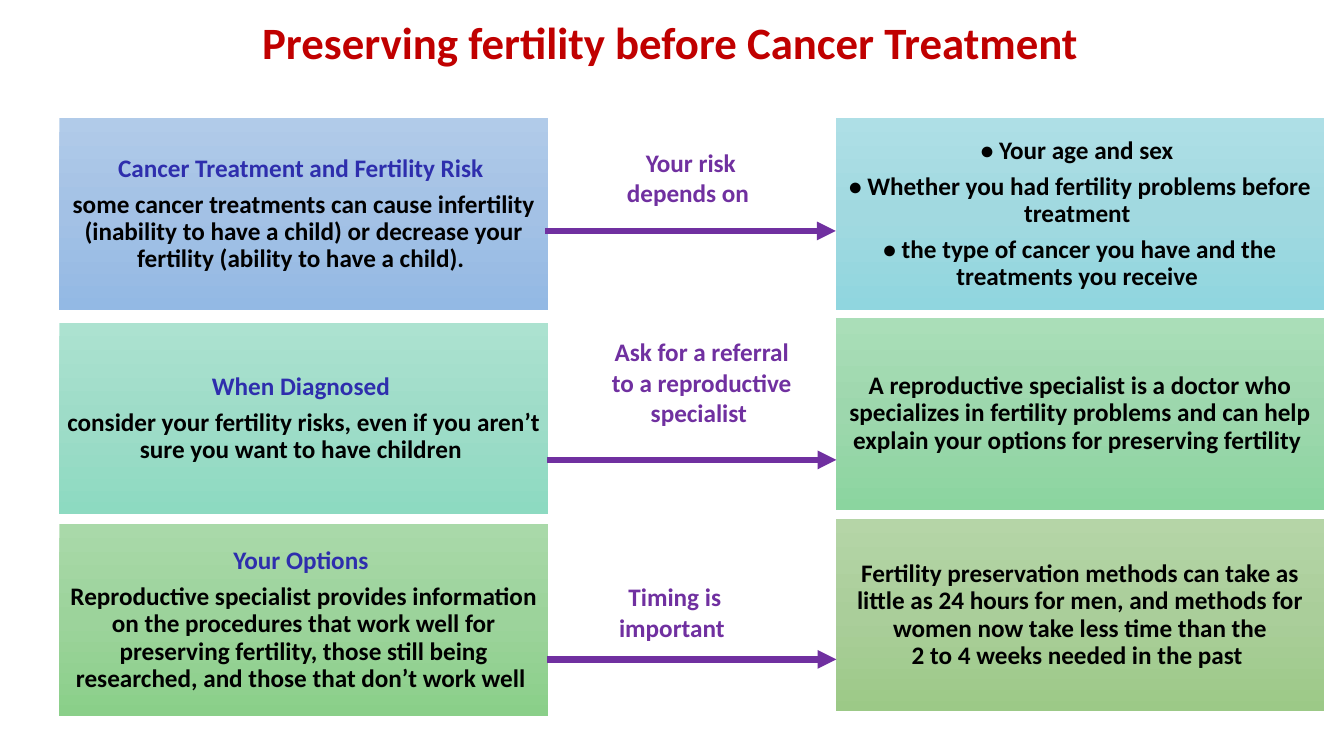
from copy import deepcopy
from dataclasses import dataclass

from pptx import Presentation
from pptx.dml.color import RGBColor
from pptx.enum import shapes, text
from pptx.oxml.ns import qn
from pptx.util import Pt


@dataclass(frozen=True)
class Theme:
    font: str = "Calibri"
    title_size: float = 32
    body_size: float = 18
    title: str = "C00000"
    heading: str = "2E2EAD"
    body: str = "000000"
    accent: str = "7030A0"
    line_width: float = 4.5
    inset: float = 5
    para_gap: float = 6.3


THEME = Theme()
CARD_WIDTH, CARD_HEIGHT = 349, 137
LEFT_X, RIGHT_X = 42.5, 597

# Each row: left card, right card (top, gradient, heading, paragraphs),
# then the label box and text, then the arrow (start, end, height)
ROWS = [
    ((84.5, ("B1CBE9", "A3C1E5", "93B9E4"), "Cancer Treatment and Fertility Risk ",
      ["some cancer treatments can cause infertility (inability to have a child) "
       "or decrease your fertility (ability to have a child). "]),
     (84.5, ("AEDFE6", "A1D9E0", "90D6DF"), None,
      ["• Your age and sex ",
       "• Whether you had fertility problems before treatment ",
       "• the type of cancer you have and the treatments you receive "]),
     ((428.5, 101.5, 130, 51), "Your risk depends on "),
     (389.5, 597, 165)),
    ((230.5, ("ACE2D0", "9EDCC8", "8DDAC1"), "When Diagnosed ",
      ["consider your fertility risks, even if you aren’t sure you want to have children "]),
     (227, ("AADEB8", "9DD7AD", "8BD59F"), None,
      ["A reproductive specialist is a doctor who specializes in fertility problems "
       "and can help explain your options for preserving fertility "]),
     ((428.5, 237, 145.5, 94.5), "Ask for a referral to a reproductive specialist "),
     (391, 597.5, 328.5)),
    ((374.5, ("A9D9A9", "9CD39B", "8ACF89"), "Your Options ",
      ["Reproductive specialist provides information on the procedures that work well for "
       "preserving fertility, those still being researched, and those that don’t work well "]),
     (371, ("B5D5A7", "AACE9A", "9CC987"), None,
      ["Fertility preservation methods can take as little as 24 hours for men, and methods "
       "for women now take less time than the\n2 to 4 weeks needed in the past "]),
     ((422.5, 412, 119, 72.5), "Timing is important "),
     (391, 597.5, 471)),
]


def write(para, words, size, color):
    para.alignment = text.PP_ALIGN.CENTER
    for index, line in enumerate(words.split("\n")):
        if index:
            para.add_line_break()
        span = para.add_run()
        span.text = line
        span.font.name = THEME.font
        span.font.size = Pt(size)
        span.font.bold = True
        span.font.color.rgb = RGBColor.from_string(color)


def add_title(page, box, words):
    title = page.shapes.title
    title.left, title.top, title.width, title.height = map(Pt, box)
    frame = title.text_frame
    frame.auto_size = text.MSO_AUTO_SIZE.NONE
    frame.vertical_anchor = text.MSO_ANCHOR.MIDDLE
    para = frame.paragraphs[0]
    para.line_spacing = 0.9
    write(para, words, THEME.title_size, THEME.title)


def fill_gradient(shape, colors):
    shape.fill.gradient()
    shape.fill.gradient_angle = 270
    stop_list = shape.fill._xPr.find(qn("a:gradFill")).find(qn("a:gsLst"))
    stop_list.insert(1, deepcopy(stop_list[0]))
    for index, (stop, color) in enumerate(zip(shape.fill.gradient_stops, colors)):
        stop.position = index / 2
        stop.color.rgb = RGBColor.from_string(color)


def add_card(page, box, colors, heading, body):
    card = page.shapes.add_shape(shapes.MSO_SHAPE.RECTANGLE, *map(Pt, box))
    card.shadow.inherit = False
    card.line.fill.background()
    fill_gradient(card, colors)
    frame = card.text_frame
    frame.word_wrap = True
    frame.vertical_anchor = text.MSO_ANCHOR.MIDDLE
    frame.margin_left = frame.margin_right = Pt(THEME.inset)
    frame.margin_top = frame.margin_bottom = Pt(THEME.inset)
    lines = [(words, THEME.body) for words in body]
    if heading:
        lines.insert(0, (heading, THEME.heading))
    for index, (words, color) in enumerate(lines):
        para = frame.add_paragraph() if index else frame.paragraphs[0]
        para.line_spacing = 0.9
        para.space_after = Pt(THEME.para_gap)
        write(para, words, THEME.body_size, color)


def add_label(page, box, words):
    frame = page.shapes.add_textbox(*map(Pt, box)).text_frame
    frame.word_wrap = True
    write(frame.paragraphs[0], words, THEME.body_size, THEME.accent)


def add_arrow(page, start, end, height):
    arrow = page.shapes.add_connector(
        shapes.MSO_CONNECTOR.STRAIGHT, Pt(start), Pt(height), Pt(end), Pt(height))
    arrow.line.width = Pt(THEME.line_width)
    arrow.line.color.rgb = RGBColor.from_string(THEME.accent)
    line = arrow.line._get_or_add_ln()
    line.append(line.makeelement(qn("a:tailEnd"), {"type": "triangle"}))
    line.addnext(line.makeelement(qn("a:effectLst"), {}))


def add_row(page, left, right, label, arrow):
    for x, (top, *content) in ((LEFT_X, left), (RIGHT_X, right)):
        add_card(page, (x, top, CARD_WIDTH, CARD_HEIGHT), *content)
    add_arrow(page, *arrow)
    add_label(page, *label)


def main():
    deck = Presentation()
    deck.slide_width, deck.slide_height = Pt(960), Pt(540)
    page = deck.slides.add_slide(deck.slide_layouts.get_by_name("Title Only"))
    add_title(page, (68.5, -20, 828, 104.5),
              "Preserving fertility before Cancer Treatment ")
    for row in ROWS:
        add_row(page, *row)
    deck.save("out.pptx")


if __name__ == "__main__":
    main()
